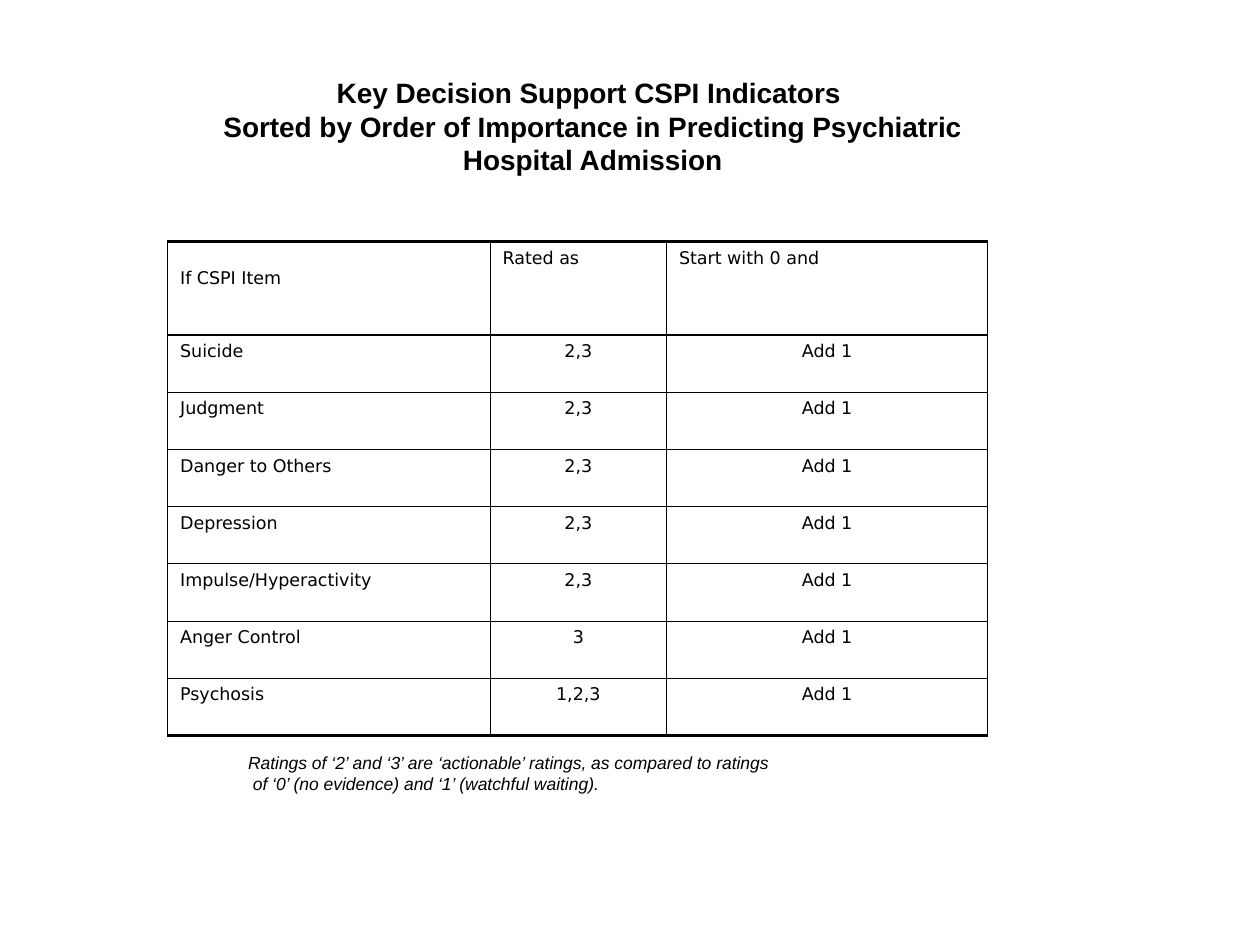
from lxml.etree import SubElement
from pptx import Presentation
from pptx.dml.color import RGBColor
from pptx.enum.text import MSO_ANCHOR as Anchor, PP_ALIGN as Align
from pptx.oxml.ns import qn
from pptx.util import Inches, Pt

BLACK = RGBColor(0, 0, 0)
WHITE = RGBColor(255, 255, 255)

TITLE = [
    "Key Decision Support CSPI Indicators ",
    "Sorted by Order of Importance in Predicting Psychiatric Hospital Admission",
]
NOTE = [
    "Ratings of ‘2’ and ‘3’ are ‘actionable’ ratings, as compared to ratings",
    " of ‘0’ (no evidence) and ‘1’ (watchful waiting).",
]
HEADER = ("If CSPI Item", "Rated as", "Start with 0 and")
RATINGS = {
    "Suicide": "2,3",
    "Judgment": "2,3",
    "Danger to Others": "2,3",
    "Depression": "2,3",
    "Impulse/Hyperactivity": "2,3",
    "Anger Control": "3",
    "Psychosis": "1,2,3",
}
COLUMN_WIDTHS = (2.56, 1.4, 2.55)
TABLE_HEIGHT = 3.92
HEADER_HEIGHT = 0.74


def write_text(frame, lines, size=10, font="Arial", bold=False, italic=False, align=Align.LEFT):
    frame.word_wrap = True
    for index, line in enumerate(lines):
        para = frame.paragraphs[0] if index == 0 else frame.add_paragraph()
        para.alignment = align
        span = para.add_run()
        span.text = line
        span.font.name = font
        span.font.size = Pt(size)
        span.font.bold = bold
        span.font.italic = italic
        span.font.color.rgb = BLACK


def add_title(page):
    title = page.shapes.title
    title.left, title.top = Inches(1.58), Inches(0.6)
    title.width, title.height = Inches(6.25), Inches(0.8)
    frame = title.text_frame
    frame.margin_left = frame.margin_right = frame.margin_top = frame.margin_bottom = 0
    frame.vertical_anchor = Anchor.MIDDLE
    write_text(frame, TITLE, size=16, bold=True, align=Align.CENTER)


def set_borders(cell, top, bottom):
    properties = cell._tc.get_or_add_tcPr()
    widths = {"a:lnL": 0.75, "a:lnR": 0.75, "a:lnT": top, "a:lnB": bottom}
    for tag, width in widths.items():
        line = SubElement(properties, qn(tag), w=str(Pt(width)))
        fill = SubElement(line, qn("a:solidFill"))
        SubElement(fill, qn("a:srgbClr"), val=str(BLACK))


def add_rating_table(page):
    rows = [HEADER] + [(item, rating, "Add 1") for item, rating in RATINGS.items()]
    frame = page.shapes.add_table(
        len(rows), len(HEADER), Inches(1.33), Inches(1.92),
        Inches(sum(COLUMN_WIDTHS)), Inches(TABLE_HEIGHT))
    table = frame.table
    table.first_row = table.horz_banding = False
    for column, width in zip(table.columns, COLUMN_WIDTHS):
        column.width = Inches(width)
    item_height = (TABLE_HEIGHT - HEADER_HEIGHT) / len(RATINGS)
    edges = [2, 1] + [0.75] * (len(rows) - 2) + [2]
    for row_index, texts in enumerate(rows):
        table.rows[row_index].height = Inches(item_height if row_index else HEADER_HEIGHT)
        for column_index, text in enumerate(texts):
            cell = table.cell(row_index, column_index)
            align = Align.CENTER if row_index and column_index else Align.LEFT
            write_text(cell.text_frame, [text], font="DejaVu Sans", align=align)
            set_borders(cell, edges[row_index], edges[row_index + 1])
            cell.fill.solid()
            cell.fill.fore_color.rgb = WHITE
    table.cell(0, 0).margin_top = Inches(0.21)


def add_note(page):
    box = page.shapes.add_textbox(Inches(1.87), Inches(5.92), Inches(4.35), Inches(0.73))
    write_text(box.text_frame, NOTE, italic=True)


def main():
    deck = Presentation()
    deck.slide_width, deck.slide_height = Inches(10), Inches(7.5)
    page = deck.slides.add_slide(deck.slide_layouts[5])
    add_title(page)
    add_rating_table(page)
    add_note(page)
    deck.save("out.pptx")


if __name__ == "__main__":
    main()
